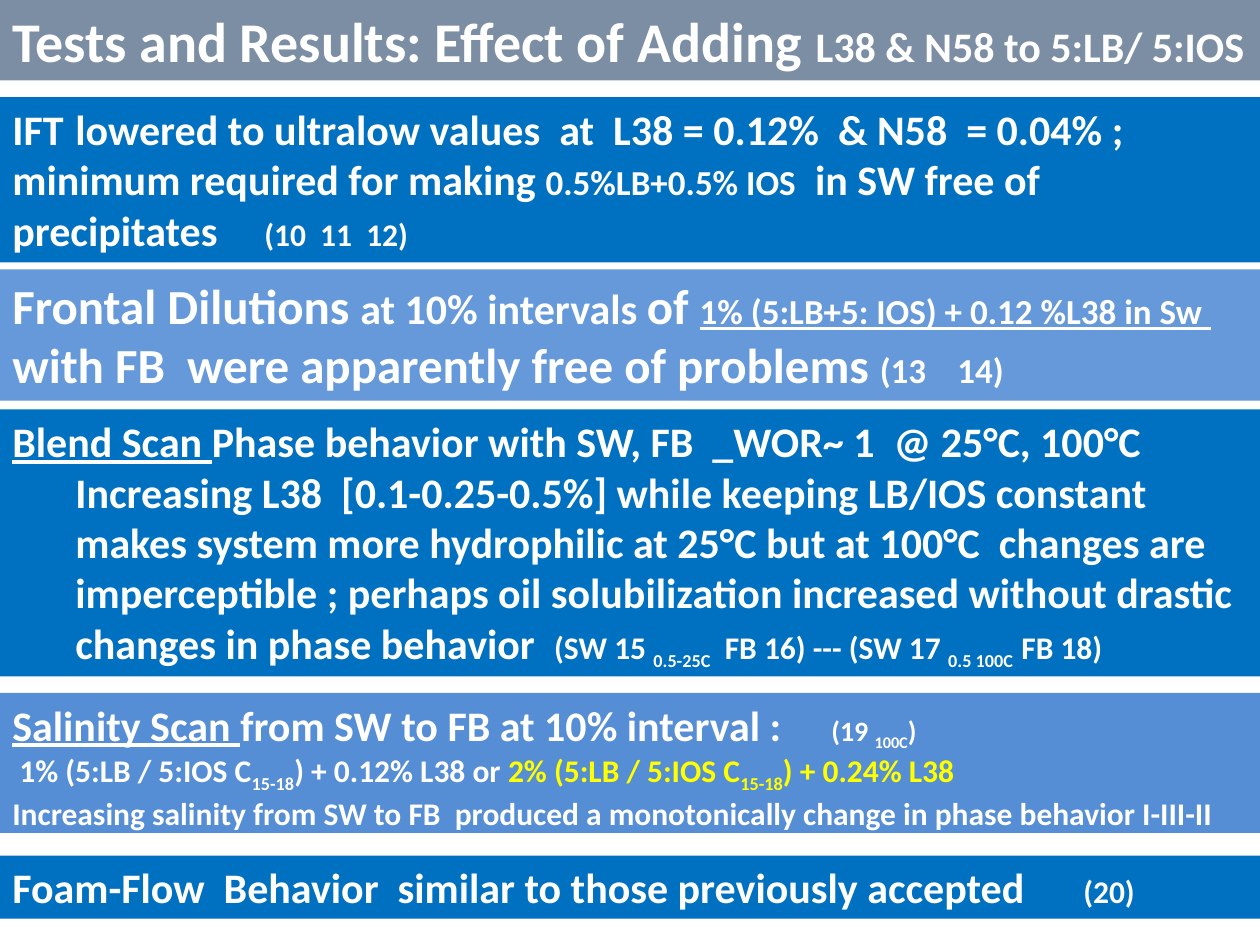
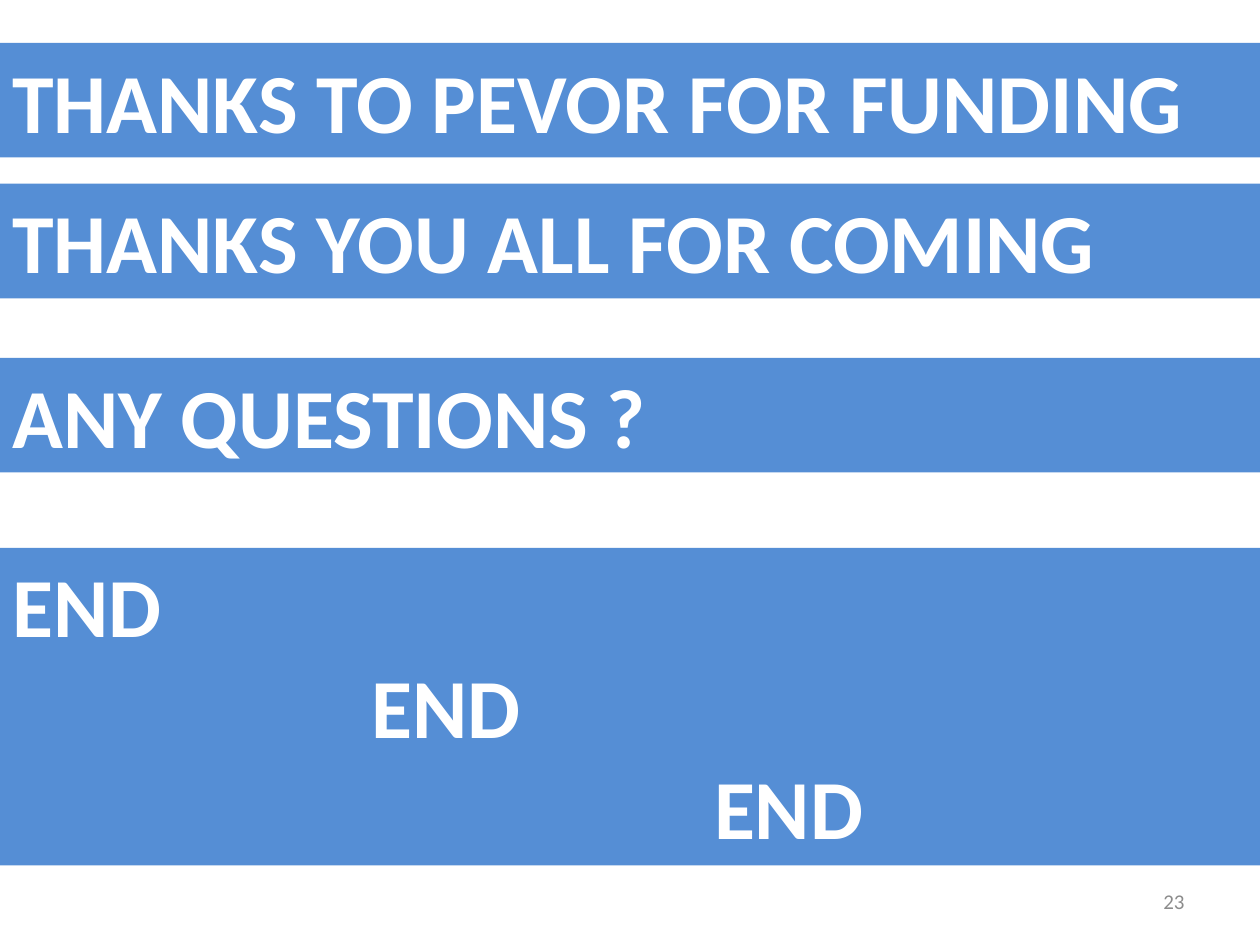
from lxml.etree import SubElement
from pptx import Presentation
from pptx.dml.color import RGBColor
from pptx.enum.shapes import MSO_SHAPE
from pptx.enum.text import MSO_ANCHOR, MSO_AUTO_SIZE, PP_ALIGN
from pptx.oxml.ns import qn
from pptx.util import Pt

COLORS = {
    "slate": "17375E",
    "deep": "0070C0",
    "soft": "558ED5",
    "white": "FFFFFF",
    "yellow": "FFFF00",
    "grey": "8C8C8C",
}
WIDTH, HEIGHT = 720, 540
SUB = {"baseline": -25}
LINE = {"underline": True}


class Deck:
    """Holds the style and the current slide."""

    font_name = "Calibri"

    def __init__(self):
        self.presentation = Presentation()
        self.presentation.slide_width = Pt(WIDTH)
        self.presentation.slide_height = Pt(HEIGHT)
        self.slide = None

    def add_slide(self):
        self.slide = self.presentation.slides.add_slide(self.presentation.slide_layouts[6])

    def band(self, top, height, color, paragraphs, size=24, opacity=100):
        """Full-width bar of bold text; each paragraph is (runs, layout)."""
        bar = self.slide.shapes.add_shape(MSO_SHAPE.RECTANGLE, 0, Pt(top), Pt(WIDTH), Pt(height))
        bar.shadow.inherit = False
        bar.line.fill.background()
        bar.fill.solid()
        bar.fill.fore_color.rgb = RGBColor.from_string(COLORS[color])
        if opacity < 100:
            tint = bar.fill._xPr.find(qn("a:solidFill"))[0]
            SubElement(tint, qn("a:alpha")).set("val", str(opacity * 1000))
        frame = bar.text_frame
        frame.word_wrap = True
        frame.auto_size = MSO_AUTO_SIZE.SHAPE_TO_FIT_TEXT
        frame.vertical_anchor = MSO_ANCHOR.TOP
        for index, (runs, layout) in enumerate(paragraphs):
            paragraph = frame.add_paragraph() if index else frame.paragraphs[0]
            paragraph.alignment = PP_ALIGN.LEFT
            self.lay_out(paragraph, **layout)
            for text, changes in runs:
                self.run(paragraph, text, {"size": size, "bold": True, "color": "white", **changes})

    def lay_out(self, paragraph, indent=0, tabs=()):
        """Set the left indent and tab stops, in points."""
        properties = paragraph._p.get_or_add_pPr()
        properties.set("marL", str(Pt(indent)))
        properties.set("indent", "0")
        if tabs:
            stops = SubElement(properties, qn("a:tabLst"))
            for position in tabs:
                stop = SubElement(stops, qn("a:tab"))
                stop.set("pos", str(Pt(position)))
                stop.set("algn", "l")

    def run(self, paragraph, text, style):
        run = paragraph.add_run()
        run.text = text
        run.font.name = self.font_name
        for key, value in style.items():
            if key == "color":
                run.font.color.rgb = RGBColor.from_string(COLORS[value])
            elif key == "baseline":
                run._r.get_or_add_rPr().set("baseline", str(value * 1000))
            else:
                setattr(run.font, key, Pt(value) if key == "size" else value)

    def page_number(self, number):
        box = self.slide.shapes.add_textbox(Pt(516), Pt(500.5), Pt(168), Pt(28.75))
        frame = box.text_frame
        frame.word_wrap = True
        frame.vertical_anchor = MSO_ANCHOR.MIDDLE
        paragraph = frame.paragraphs[0]
        paragraph.alignment = PP_ALIGN.RIGHT
        self.run(paragraph, str(number), {"size": 12, "color": "grey"})


def build_results(deck):
    s16, s18, s20, s24 = ({"size": size} for size in (16, 18, 20, 24))
    yellow = {**s18, "color": "yellow"}

    deck.add_slide()
    deck.band(0, 46, "slate", [([
        ("Tests and Results: Effect of Adding ", {}),
        ("L38 & N58 to 5:LB/ 5:IOS", s24),
    ], {})], size=32, opacity=56)
    deck.band(55.5, 94.5, "deep", [([
        ("IFT\tlowered to ultralow values  at  L38 = 0.12%  & N58  = 0.04% ; "
         "minimum required for making ", {}),
        ("0.5%LB+0.5% IOS", s20),
        ("  in SW free of  precipitates\t", {}),
        ("(10  11  12)", s18),
    ], {"tabs": (45, 144)})])
    deck.band(154, 75, "soft", [([
        ("Frontal Dilutions ", {}),
        ("at 10% intervals ", s24),
        ("of ", {}),
        ("1% (5:LB+5: IOS) + 0.12 %L38 in Sw  ", {**s20, **LINE}),
        ("with FB  were apparently free of problems ", {}),
        ("(13\t14)", s20),
    ], {"tabs": (541,)})], size=28, opacity=90)
    deck.band(234, 152.5, "deep", [
        ([("Blend Scan ", LINE),
          ("Phase behavior with SW, FB  _WOR~ 1  @ 25°C, 100°C", {})], {}),
        ([("Increasing L38  [0.1-0.25-0.5%] while keeping LB/IOS constant makes system more "
           "hydrophilic at 25°C but at 100°C  changes are imperceptible ; perhaps oil "
           "solubilization increased without drastic changes in phase behavior  ", {}),
          ("(SW 15 ", s18),
          ("0.5-25C", {**s18, **SUB}),
          ("  FB 16) --- (SW 17 ", s18),
          ("0.5 100C  ", {**s18, **SUB}),
          ("FB 18)", s18)], {"indent": 36}),
    ])
    deck.band(396, 80, "soft", [
        ([("Salinity Scan ", LINE),
          ("from SW to FB at 10% interval :\t", {}),
          ("(19 ", s16),
          ("100C", {**s16, **SUB}),
          (")", s16)], {"tabs": (461.5,)}),
        ([("1% (5:LB / 5:IOS C", s18),
          ("15-18", {**s18, **SUB}),
          (") + 0.12% L38 or ", s18),
          ("2% (5:LB / 5:IOS C", yellow),
          ("15-18", {**yellow, **SUB}),
          (") + 0.24% L38", yellow)], {"indent": 4}),
        ([("Increasing salinity from SW to FB  produced a monotonically change in phase "
           "behavior I-III-II", s18)], {}),
    ])
    deck.band(489, 36, "deep", [([
        ("Foam-Flow  Behavior  similar to those previously accepted\t", {}),
        ("(20)", s18),
    ], {"tabs": (595.5,)})])


def build_closing(deck):
    deck.add_slide()
    messages = {
        24.5: "THANKS TO PEVOR FOR FUNDING",
        105: "THANKS YOU ALL FOR COMING",
        204.5: "ANY QUESTIONS ?",
    }
    for top, message in messages.items():
        deck.band(top, 65.5, "soft", [([(message, {})], {})], size=48)
    endings = [([("END", {})], {"indent": indent}) for indent in (0, 205, 401)]
    deck.band(313, 181.5, "soft", endings, size=48)
    deck.page_number(23)


def main():
    deck = Deck()
    build_results(deck)
    build_closing(deck)
    deck.presentation.save("out.pptx")


if __name__ == "__main__":
    main()
